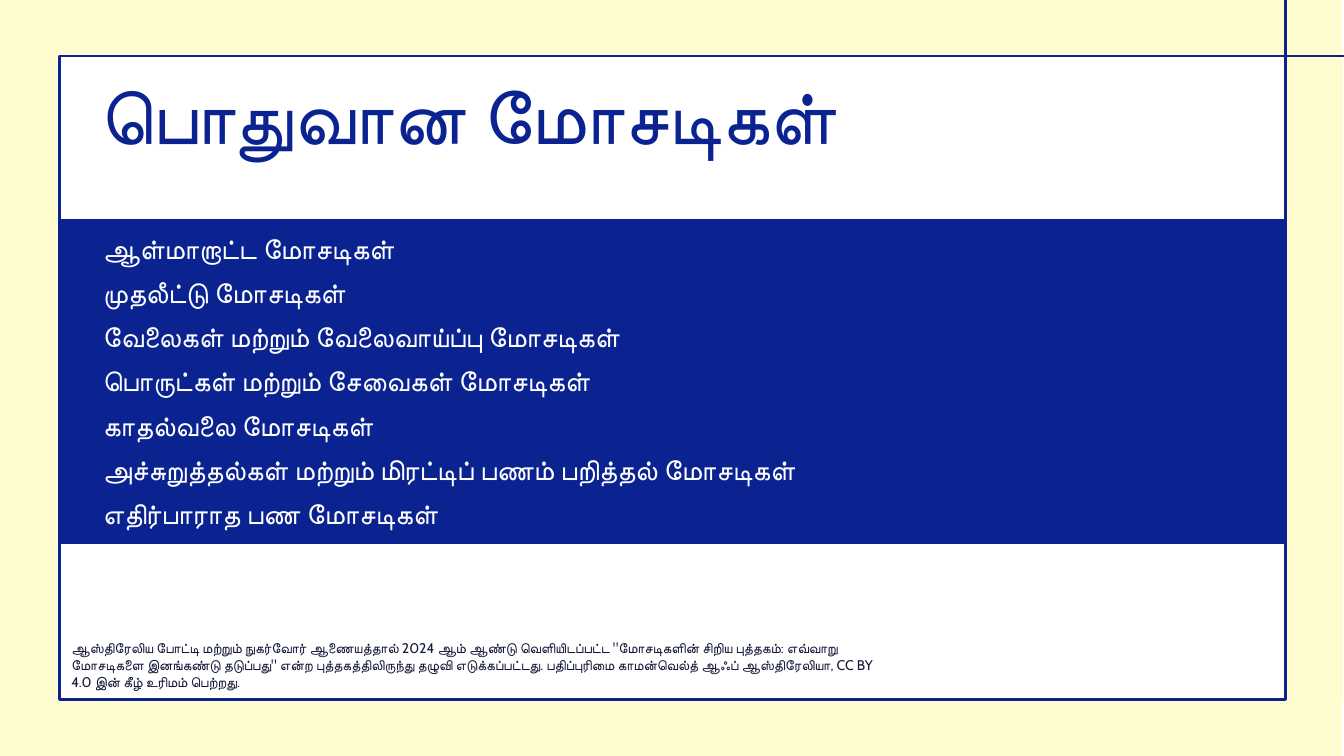
from dataclasses import dataclass

from lxml.etree import SubElement
from pptx import Presentation
from pptx.dml.color import RGBColor as RGB
from pptx.enum.shapes import MSO_SHAPE as SHAPE
from pptx.enum.text import MSO_ANCHOR as ANCHOR, MSO_AUTO_SIZE as FIT, PP_ALIGN as ALIGN
from pptx.oxml.ns import qn
from pptx.util import Inches, Pt

TITLE = "பொதுவான மோசடிகள்"
SCAMS = [
    "ஆள்மாறாட்ட மோசடிகள்",
    "முதலீட்டு மோசடிகள்",
    "வேலைகள் மற்றும் வேலைவாய்ப்பு மோசடிகள்",
    "பொருட்கள் மற்றும் சேவைகள் மோசடிகள்",
    "காதல்வலை மோசடிகள்",
    "அச்சுறுத்தல்கள் மற்றும் மிரட்டிப் பணம் பறித்தல் மோசடிகள்",
    "எதிர்பாராத பண மோசடிகள்",
]
CREDIT = (
    'ஆஸ்திரேலிய போட்டி மற்றும் நுகர்வோர் ஆணையத்தால் 2024 ஆம் ஆண்டு வெளியிடப்பட்ட '
    '"மோசடிகளின் சிறிய புத்தகம்: எவ்வாறு மோசடிகளை இனங்கண்டு தடுப்பது" என்ற '
    'புத்தகத்திலிருந்து தழுவி எடுக்கப்பட்டது. பதிப்புரிமை காமன்வெல்த் ஆஃப் '
    'ஆஸ்திரேலியா, CC BY 4.0 இன் கீழ் உரிமம் பெற்றது.'
)


@dataclass(frozen=True)
class Theme:
    font: str = "Cabin"
    navy: RGB = RGB(0x0A, 0x23, 0x91)
    ink: RGB = RGB(0x12, 0x17, 0x37)
    cream: RGB = RGB(0xFF, 0xFC, 0xCF)
    white: RGB = RGB(0xFF, 0xFF, 0xFF)
    title: int = 54
    item: int = 20
    credit: int = 10
    line: float = 1.5


T = Theme()
W, H = 13.33, 7.5
EDGE, BAR = 0.59, 0.56
SHIFT = -0.02
INNER_H = H - 2 * BAR
FRAME_W = W - 2 * EDGE + 0.01

BORDERS = [
    (SHIFT, 0, W, BAR),
    (SHIFT, H - BAR, W, BAR),
    (SHIFT, BAR, EDGE, INNER_H),
    (EDGE + FRAME_W + SHIFT, BAR, EDGE, INNER_H),
]
CORNER = (EDGE + FRAME_W, -0.13, 0.71, BAR + 0.13)
FRAME = (EDGE, BAR, FRAME_W, INNER_H)
BAND = (EDGE, 2.18, FRAME_W + SHIFT, 3.21)


def add_box(s, box, fill=None, line=None):
    sp = s.shapes.add_shape(SHAPE.RECTANGLE, *map(Inches, box))
    sp.shadow.inherit = False
    if fill is None:
        sp.fill.background()
    else:
        sp.fill.solid()
        sp.fill.fore_color.rgb = fill
    if line is None:
        sp.line.fill.background()
    else:
        sp.line.color.rgb = line
        sp.line.width = Pt(T.line)


def write(sp, box, lines, size, color, bold=False, spacing=1.0, before=0, fit=FIT.NONE):
    sp.left, sp.top, sp.width, sp.height = map(Inches, box)
    tf = sp.text_frame
    tf.text = "\n".join(lines)
    tf.word_wrap = True
    tf.auto_size = fit
    tf.vertical_anchor = ANCHOR.TOP
    for i, p in enumerate(tf.paragraphs):
        p.alignment = ALIGN.LEFT
        p.line_spacing = spacing
        p.space_before = Pt(before if i else 0)
        pPr = p._p.get_or_add_pPr()
        pPr.set("marL", "0")
        pPr.set("indent", "0")
        SubElement(pPr, qn("a:buNone"))
        for r in p.runs:
            r.font.size = Pt(size)
            r.font.bold = bold
            r.font.color.rgb = color
            r.font.name = T.font
            rPr = r._r.get_or_add_rPr()
            rPr.set("kern", "0")
            SubElement(rPr, qn("a:cs")).set("typeface", T.font)


def main():
    prs = Presentation()
    prs.slide_width, prs.slide_height = Inches(W), Inches(H)
    s = prs.slides.add_slide(prs.slide_layouts[1])
    title, body = s.placeholders

    write(title, (0.9, 0.74, 11.5, 1.42), [TITLE], T.title, T.navy, bold=True, spacing=0.9)
    credit = s.shapes.add_textbox(0, 0, 0, 0)
    write(credit, (0.61, 6.3, 8.27, 0.77), [CREDIT], T.credit, T.ink, fit=FIT.SHAPE_TO_FIT_TEXT)

    for box in BORDERS:
        add_box(s, box, fill=T.cream)
    for box in (CORNER, FRAME):
        add_box(s, box, line=T.navy)
    add_box(s, BAND, fill=T.navy, line=T.navy)

    write(body, (0.92, 2.28, 11.5, 2.93), SCAMS, T.item, T.white, spacing=0.9, before=10)
    body.element.getparent().append(body.element)

    prs.save("out.pptx")


if __name__ == "__main__":
    main()
